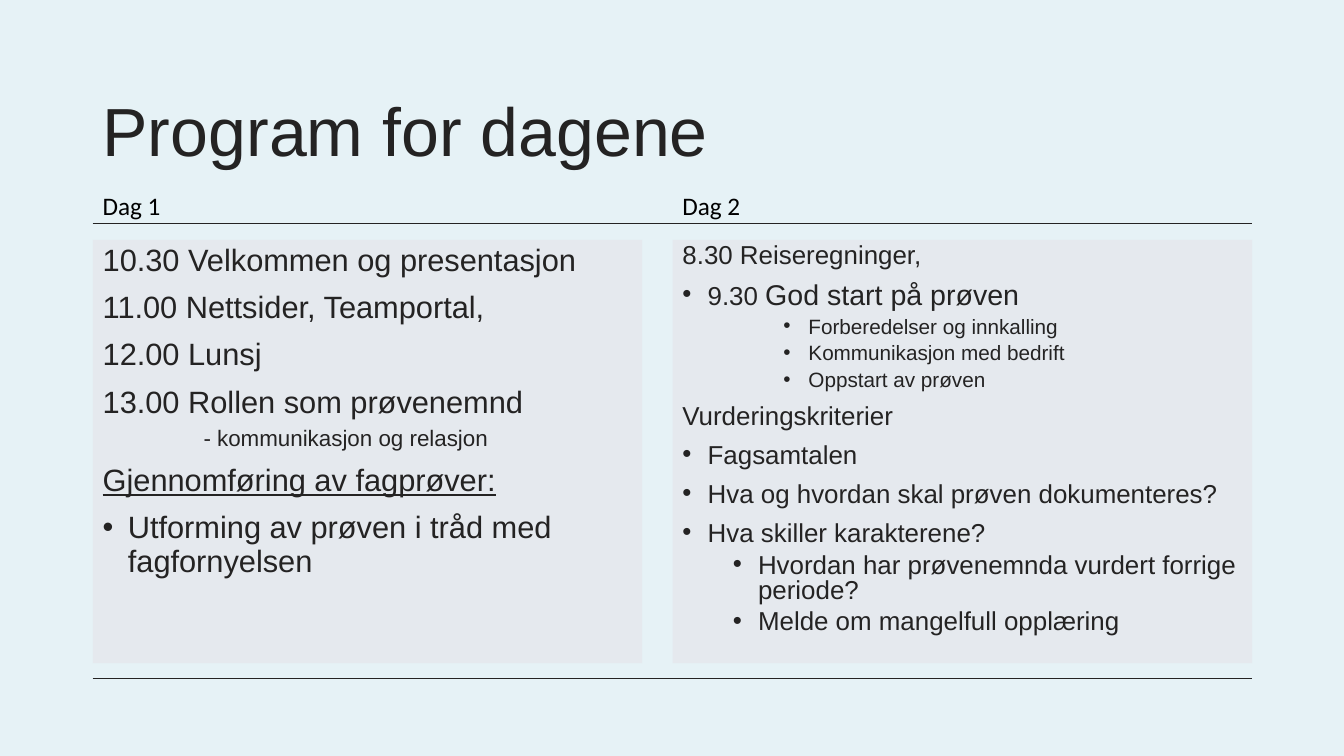
from lxml.etree import SubElement
from pptx import Presentation
from pptx.dml.color import RGBColor
from pptx.enum.shapes import MSO_CONNECTOR as Connector, MSO_SHAPE as Shape
from pptx.enum.text import MSO_ANCHOR as Anchor, PP_ALIGN as Align
from pptx.oxml.ns import qn
from pptx.util import Inches, Pt

THEME = {
    "background": RGBColor.from_string("E6F2F6"),
    "panel": RGBColor.from_string("E5E9EE"),
    "ink": RGBColor.from_string("242323"),
    "label": RGBColor.from_string("000000"),
    "body_font": "Arial",
    "label_font": "Calibri",
    "title_size": 48.6,
    "label_size": 18,
    "rule_width": 0.5,
}

# Columns and rows of the slide, in inches
LEFT, RIGHT = 0.92, 12.42
TITLE_TOP, TITLE_HEIGHT = 0.99, 0.69
LABEL_TOP, LABEL_HEIGHT = 1.84, 0.4
PANEL_TOP, PANEL_HEIGHT = 2.38, 4.2
RULES = (2.22, 6.73)
STEP = 0.25

# Paragraph styles: outline level, indent in steps, bullet, space before
STYLES = {
    "plain": (0, 0, False, 10),
    "note": (2, 4, False, 5),
    "bullet": (0, 1, True, 10),
    "sub": (1, 3, True, 5),
    "detail": (2, 5, True, 5),
}

# Each program line: style, then runs of text, size and underline
DAYS = [
    {"label": "Dag 1", "left": LEFT, "width": 5.45, "spacing": 0.9, "program": [
        ("plain", [("10.30 Velkommen og presentasjon", 22, False)]),
        ("plain", [("11.00 Nettsider, Teamportal,", 22, False)]),
        ("plain", [("12.00 Lunsj", 22, False)]),
        ("plain", [("13.00 Rollen som prøvenemnd", 22, False)]),
        ("note", [("- kommunikasjon og relasjon", 16, False)]),
        ("plain", [("Gjennomføring av fagprøver:", 22, True)]),
        ("bullet", [("Utforming av prøven i tråd med fagfornyelsen", 22, False)]),
    ]},
    {"label": "Dag 2", "left": 6.67, "width": 5.75, "spacing": 0.8, "program": [
        ("plain", [("8.30 Reiseregninger,", 18.5, False)]),
        ("bullet", [("9.30 ", 18.5, False), ("God start på prøven", 20.4, False)]),
        ("detail", [("Forberedelser og innkalling", 14.8, False)]),
        ("detail", [("Kommunikasjon med bedrift", 14.8, False)]),
        ("detail", [("Oppstart av prøven", 14.8, False)]),
        ("plain", [("Vurderingskriterier", 18.5, False)]),
        ("bullet", [("Fagsamtalen", 18.5, False)]),
        ("bullet", [("Hva og hvordan skal prøven dokumenteres?", 18.5, False)]),
        ("bullet", [("Hva skiller karakterene?", 18.5, False)]),
        ("sub", [("Hvordan har prøvenemnda vurdert forrige periode?", 18.5, False)]),
        ("sub", [("Melde om mangelfull opplæring", 18.5, False)]),
    ]},
]


def add_run(paragraph, text, size, font="body_font", color="ink", underline=False):
    run = paragraph.add_run()
    run.text = text
    run.font.color.rgb = THEME[color]
    formats = {"name": THEME[font], "size": Pt(size), "underline": underline}
    for attribute, value in formats.items():
        setattr(run.font, attribute, value)


def indent(paragraph, steps, bulleted):
    """Set the left indent and, if bulleted, a hanging bullet."""
    properties = paragraph._p.get_or_add_pPr()
    properties.set("marL", str(Inches(steps * STEP)))
    properties.set("indent", str(Inches(-STEP if bulleted else 0)))
    if bulleted:
        SubElement(properties, qn("a:buFont"), typeface="Arial")
        SubElement(properties, qn("a:buChar"), char="•")


deck = Presentation()
deck.slide_width, deck.slide_height = Inches(13.33), Inches(7.5)
slide = deck.slides.add_slide(deck.slide_layouts[6])
slide.background.fill.solid()
slide.background.fill.fore_color.rgb = THEME["background"]

for height in RULES:
    rule = slide.shapes.add_connector(
        Connector.STRAIGHT, Inches(LEFT), Inches(height), Inches(RIGHT), Inches(height))
    rule.line.color.rgb = THEME["ink"]
    rule.line.width = Pt(THEME["rule_width"])
    SubElement(rule._element.spPr, qn("a:effectLst"))

title = slide.shapes.add_textbox(
    Inches(LEFT), Inches(TITLE_TOP), Inches(RIGHT - LEFT), Inches(TITLE_HEIGHT)).text_frame
title.word_wrap = True
title.vertical_anchor = Anchor.MIDDLE
title.paragraphs[0].line_spacing = 0.9
add_run(title.paragraphs[0], "Program for dagene", THEME["title_size"])

for day in DAYS:
    left = Inches(day["left"])
    label = slide.shapes.add_textbox(
        left, Inches(LABEL_TOP), Inches(1), Inches(LABEL_HEIGHT)).text_frame
    label.word_wrap = True
    add_run(label.paragraphs[0], day["label"], THEME["label_size"], "label_font", "label")

    panel = slide.shapes.add_shape(
        Shape.RECTANGLE, left, Inches(PANEL_TOP), Inches(day["width"]), Inches(PANEL_HEIGHT))
    panel.shadow.inherit = False
    panel.fill.solid()
    panel.fill.fore_color.rgb = THEME["panel"]
    panel.line.fill.background()
    program = panel.text_frame
    program.word_wrap = True
    program.vertical_anchor = Anchor.TOP

    for number, (style, runs) in enumerate(day["program"]):
        level, steps, bulleted, space = STYLES[style]
        paragraph = program.add_paragraph() if number else program.paragraphs[0]
        formats = {"level": level, "alignment": Align.LEFT, "line_spacing": day["spacing"],
                   "space_before": Pt(space if number else 0)}
        for attribute, value in formats.items():
            setattr(paragraph, attribute, value)
        indent(paragraph, steps, bulleted)
        for text, size, underline in runs:
            add_run(paragraph, text, size, underline=underline)

deck.save("out.pptx")
